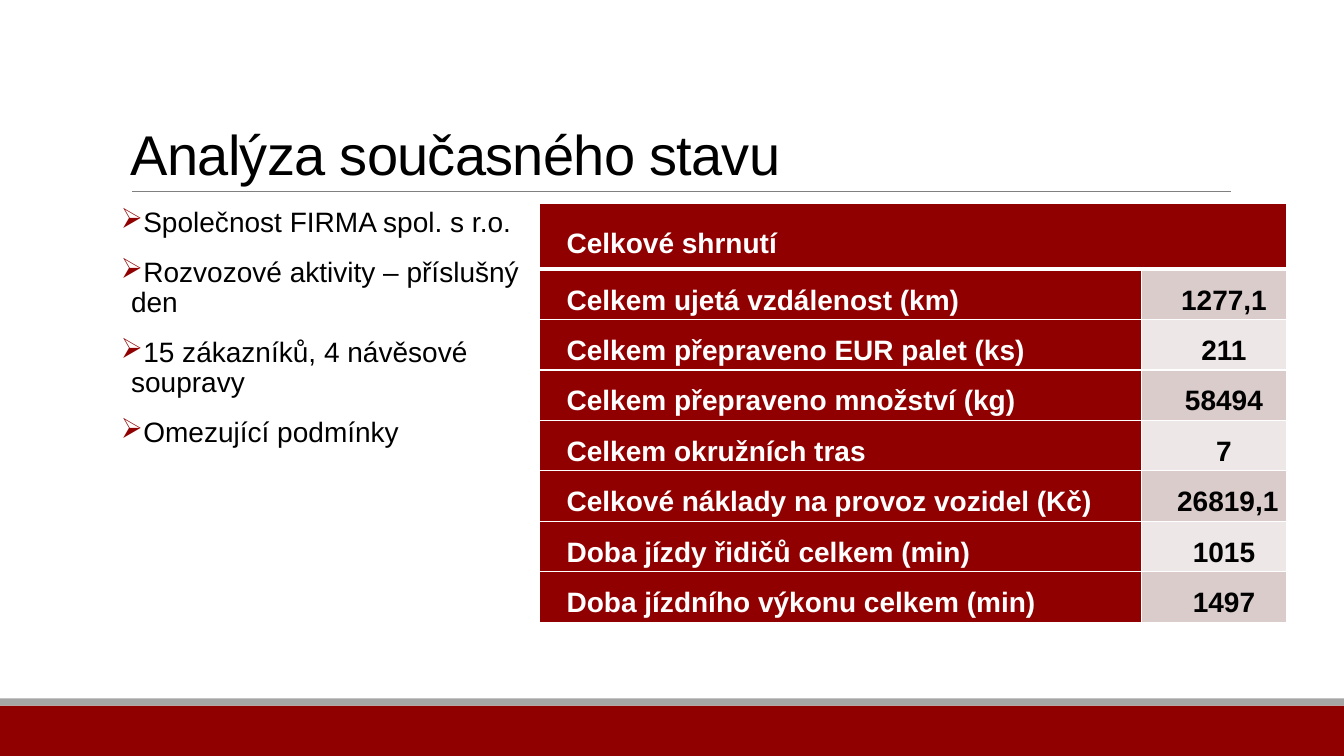
from lxml.etree import SubElement
from pptx import Presentation
from pptx.dml.color import RGBColor
from pptx.enum.shapes import MSO_CONNECTOR, MSO_SHAPE
from pptx.enum.text import MSO_ANCHOR, PP_ALIGN
from pptx.oxml.ns import qn
from pptx.util import Inches, Pt

COLORS = {
    "red": "900000", "grey": "A5A5A5", "rule": "808080", "black": "000000",
    "white": "FFFFFF", "dark_band": "DBCCCC", "light_band": "EEE7E7",
}
BULLETS = [
    "Společnost FIRMA spol. s r.o.",
    "Rozvozové aktivity – příslušný den",
    "15 zákazníků, 4 návěsové soupravy",
    "Omezující podmínky",
]
SUMMARY_TITLE = "Celkové shrnutí"
SUMMARY = [
    ("Celkem ujetá vzdálenost (km)", "1277,1"),
    ("Celkem přepraveno EUR palet (ks)", "211"),
    ("Celkem přepraveno množství (kg)", "58494"),
    ("Celkem okružních tras", "7"),
    ("Celkové náklady na provoz vozidel (Kč)", " 26819,1"),
    ("Doba jízdy řidičů celkem (min)", "1015"),
    ("Doba jízdního výkonu celkem (min)", "1497"),
]


def color(name):
    return RGBColor.from_string(COLORS[name])


def write(para, text, size=20, ink="black", bold=False, align=None, line_spacing=0.9,
          before=0, after=0, margin=0, indent=0, tracking=None, bullet=None):
    para.alignment = align
    para.line_spacing = line_spacing
    para.space_before, para.space_after = Pt(before), Pt(after)
    properties = para._p.get_or_add_pPr()
    properties.set("marL", str(Inches(margin)))
    properties.set("indent", str(Inches(indent)))
    if bullet:
        bullet_color = SubElement(properties, qn("a:buClr"))
        SubElement(bullet_color, qn("a:srgbClr"), val=COLORS["red"])
        SubElement(properties, qn("a:buChar"), char=bullet)
    span = para.add_run()
    span.text = text
    span.font.name, span.font.size, span.font.bold = "Arial", Pt(size), bold
    span.font.color.rgb = color(ink)
    if tracking is not None:
        span._r.get_or_add_rPr().set("spc", str(round(tracking * 100)))


def add_bar(page, top, height, fill):
    bar = page.shapes.add_shape(MSO_SHAPE.RECTANGLE, 0, Inches(top),
                                Inches(13.33), Inches(height))
    bar.shadow.inherit = False
    bar.fill.solid()
    bar.fill.fore_color.rgb = color(fill)
    bar.line.fill.background()


def add_rule(page, left, right, top):
    rule = page.shapes.add_connector(MSO_CONNECTOR.STRAIGHT, Inches(left), Inches(top),
                                     Inches(right), Inches(top))
    rule.line.color.rgb = color("rule")
    rule.line.width = Pt(0.5)
    SubElement(rule._element.spPr, qn("a:effectLst"))


def add_text_frame(page, left, top, width, height):
    box = page.shapes.add_textbox(Inches(left), Inches(top), Inches(width), Inches(height))
    box.text_frame.word_wrap = True
    return box.text_frame


def add_title(page, text):
    frame = add_text_frame(page, 1.2, 0.31, 11, 1.59)
    frame.vertical_anchor = MSO_ANCHOR.BOTTOM
    write(frame.paragraphs[0], text, size=40, line_spacing=0.85, tracking=-0.5)


def add_bullets(page, items):
    frame = add_text_frame(page, 1.2, 2.02, 4.28, 4.4)
    frame.margin_left = frame.margin_right = 0
    for index, item in enumerate(items):
        para = frame.add_paragraph() if index else frame.paragraphs[0]
        write(para, item, before=12, after=2, margin=0.1, indent=-0.1, bullet="➢")


def set_borders(cell, top=1, bottom=1):
    """Draw white borders, with widths in points; the sides are 1 point."""
    properties = cell._tc.get_or_add_tcPr()
    for side, width in (("L", 1), ("R", 1), ("T", top), ("B", bottom)):
        line = SubElement(properties, qn(f"a:ln{side}"), w=str(Pt(width)))
        fill = SubElement(line, qn("a:solidFill"))
        SubElement(fill, qn("a:srgbClr"), val=COLORS["white"])


def fill_cell(cell, text, fill, ink, align, top=1, bottom=1):
    set_borders(cell, top, bottom)
    cell.fill.solid()
    cell.fill.fore_color.rgb = color(fill)
    cell.margin_left = cell.margin_right = Inches(0.07)
    cell.margin_top = cell.margin_bottom = 0
    write(cell.text_frame.paragraphs[0], text, ink=ink, bold=True, align=align,
          line_spacing=1.5, indent=0.2)


def add_summary(page, title, rows):
    frame = page.shapes.add_table(len(rows) + 1, 2, Inches(5.35), Inches(2.02),
                                  Inches(7.41), Inches(3.94))
    table = frame.table
    table.horz_banding = False
    table.columns[0].width, table.columns[1].width = Inches(5.97), Inches(1.44)
    for index, row in enumerate(table.rows):
        row.height = Inches(0.47 if index else 0.65)

    header = table.cell(0, 0)
    header.merge(table.cell(0, 1))
    set_borders(table.cell(0, 1), bottom=3)
    fill_cell(header, title, "red", "white", PP_ALIGN.JUSTIFY, bottom=3)
    header.vertical_anchor = MSO_ANCHOR.MIDDLE
    for index, (label, value) in enumerate(rows, start=1):
        top = 3 if index == 1 else 1
        band = "dark_band" if index % 2 else "light_band"
        fill_cell(table.cell(index, 0), label, "red", "white", PP_ALIGN.JUSTIFY, top)
        fill_cell(table.cell(index, 1), value, band, "black", PP_ALIGN.CENTER, top)


def main():
    deck = Presentation()
    deck.slide_width, deck.slide_height = Inches(13.33), Inches(7.5)
    page = deck.slides.add_slide(deck.slide_layouts[6])
    add_bar(page, 7, 0.5, "red")
    add_bar(page, 6.93, 0.07, "grey")
    add_rule(page, 1.31, 12.21, 1.9)
    add_title(page, "Analýza současného stavu")
    add_bullets(page, BULLETS)
    add_summary(page, SUMMARY_TITLE, SUMMARY)
    deck.save("out.pptx")


if __name__ == "__main__":
    main()
